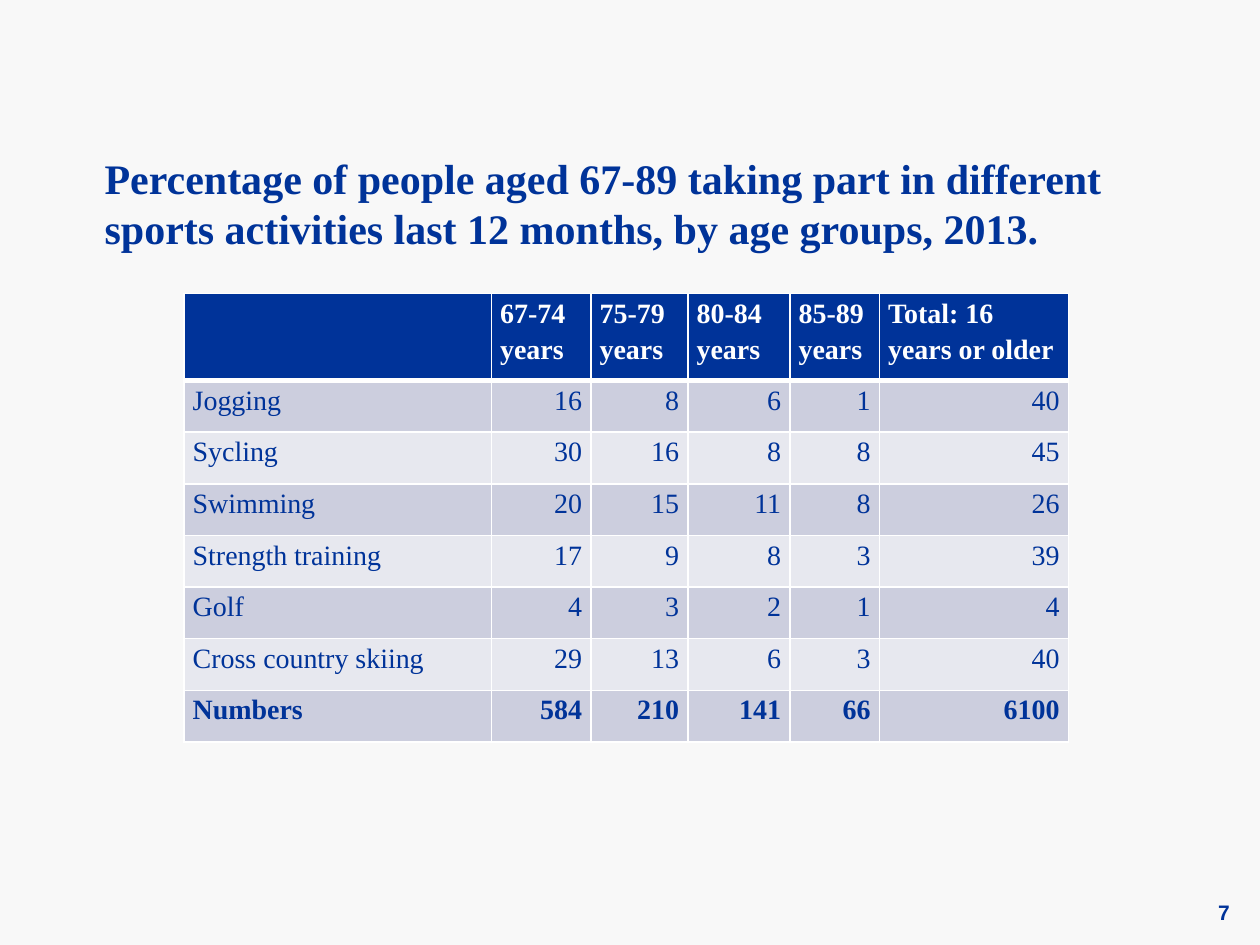
from dataclasses import dataclass

from lxml.etree import SubElement as Sub
from pptx import Presentation
from pptx.dml.color import RGBColor as RGB
from pptx.enum.text import MSO_ANCHOR as Anchor, MSO_AUTO_SIZE as Fit, PP_ALIGN as Align
from pptx.oxml.ns import qn
from pptx.util import Inches, Pt

HUES = {"back": "F8F8F8", "navy": "003399", "white": "FFFFFF",
        "dark": "CCCEDE", "light": "E7E8EF"}
SERIF = "Times New Roman"
WIDTHS = [2.44, 0.79, 0.77, 0.81, 0.71, 1.5]
HEAD, BODY = 0.69, 0.41


@dataclass
class Row:
    cells: list[str]
    fill: str
    hue: str = "navy"
    bold: bool = False
    top: float = 1
    base: float = 1


def rgb(name: str) -> RGB:
    return RGB.from_string(HUES[name])


def style(para, size: float, hue: str, bold: bool, face: str = SERIF) -> None:
    form = {"name": face, "size": Pt(size), "bold": bold}
    for key, val in form.items():
        setattr(para.font, key, val)
    para.font.color.rgb = rgb(hue)


def frame(text, side: float = 0, anchor=Anchor.MIDDLE) -> None:
    form = {"margin_left": Inches(side), "margin_right": Inches(side),
            "margin_top": 0, "margin_bottom": 0, "word_wrap": True,
            "vertical_anchor": anchor}
    for key, val in form.items():
        setattr(text, key, val)


def edge(cell, tag: str, width: float) -> None:
    line = Sub(cell._tc.get_or_add_tcPr(), qn(f"a:{tag}"), w=str(Pt(width)))
    Sub(Sub(line, qn("a:solidFill")), qn("a:srgbClr"), val=HUES["white"])


def draw_row(grid, i: int, row: Row) -> None:
    grid.rows[i].height = Inches(BODY if i else HEAD)
    for j, word in enumerate(row.cells):
        cell = grid.cell(i, j)
        cell.margin_left = cell.margin_right = Inches(0.07)
        cell.margin_top = cell.margin_bottom = 0
        # Borders come before the fill in the cell properties
        for tag, width in zip(("lnL", "lnR", "lnT", "lnB"), (1, 1, row.top, row.base)):
            edge(cell, tag, width)
        cell.fill.solid()
        cell.fill.fore_color.rgb = rgb(row.fill)
        cell.text = word
        para = cell.text_frame.paragraphs[0]
        para.line_spacing = 1.15
        para.alignment = Align.RIGHT if i and j else Align.LEFT
        style(para, 16, row.hue, row.bold)


def main() -> None:
    deck = Presentation()
    deck.slide_width, deck.slide_height = Inches(10), Inches(7.5)
    slide = deck.slides.add_slide(deck.slide_layouts[5])
    slide.background.fill.solid()
    slide.background.fill.fore_color.rgb = rgb("back")

    # Title
    title = slide.shapes.title
    place = {"left": 0.83, "top": 1.15, "width": 8.03, "height": 0.92}
    for key, val in place.items():
        setattr(title, key, Inches(val))
    frame(title.text_frame)
    title.text_frame.auto_size = Fit.NONE
    para = title.text_frame.paragraphs[0]
    para.text = ("Percentage of people aged 67-89 taking part in different\v"
                 "sports activities last 12 months, by age groups, 2013.")
    para.alignment = Align.LEFT
    style(para, 24, "navy", True)

    # Table of sports by age group
    ages = [f"{span} years" for span in ("67-74", "75-79", "80-84", "85-89")]
    sports = [
        ("Jogging", 16, 8, 6, 1, 40),
        ("Sycling", 30, 16, 8, 8, 45),
        ("Swimming", 20, 15, 11, 8, 26),
        ("Strength training", 17, 9, 8, 3, 39),
        ("Golf", 4, 3, 2, 1, 4),
        ("Cross country skiing", 29, 13, 6, 3, 40),
        ("Numbers", 584, 210, 141, 66, 6100),
    ]
    rows = [Row(["", *ages, "Total: 16 years or older"], "navy", "white", True, base=3)]
    for i, vals in enumerate(sports):
        rows.append(Row([str(val) for val in vals], "light" if i % 2 else "dark",
                        bold=vals[0] == "Numbers", top=1 if i else 3))
    high = HEAD + BODY * len(sports)
    grid = slide.shapes.add_table(len(rows), len(WIDTHS), Inches(1.46), Inches(2.33),
                                  Inches(sum(WIDTHS)), Inches(high)).table
    for col, width in zip(grid.columns, WIDTHS):
        col.width = Inches(width)
    for i, row in enumerate(rows):
        draw_row(grid, i, row)

    # Page number
    page = slide.shapes.add_textbox(Inches(9.25), Inches(7.11), Inches(0.51), Inches(0.26))
    frame(page.text_frame)
    para = page.text_frame.paragraphs[0]
    para.text = "7"
    para.alignment = Align.RIGHT
    style(para, 12, "navy", True, "Arial")

    deck.save("out.pptx")


if __name__ == "__main__":
    main()
